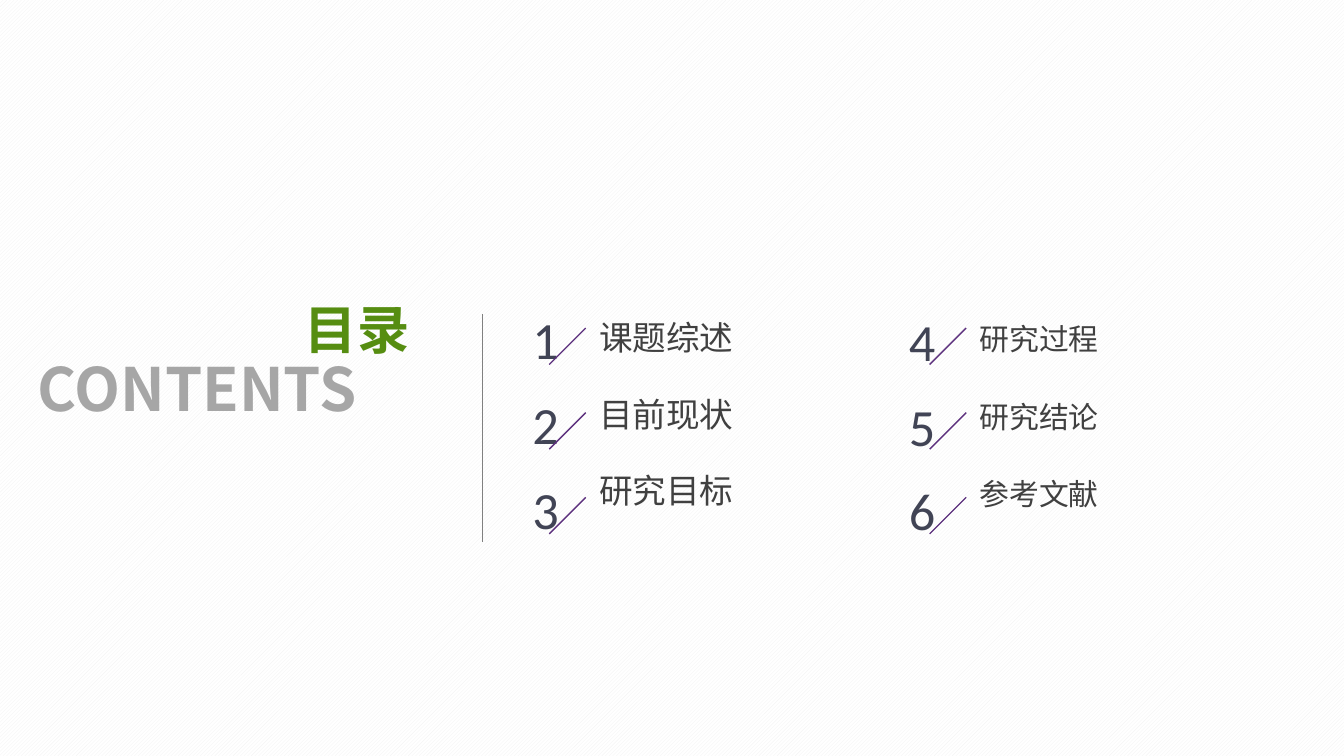
"""Build a contents slide with two numbered columns of topics."""
from dataclasses import dataclass

from lxml import etree
from pptx import Presentation
from pptx import util as u
from pptx.dml.color import RGBColor
from pptx.enum import dml, shapes, text
from pptx.oxml.ns import qn

COLORS = {
    "white": "FFFFFF", "stripe": "F2F2F2", "title": "568D11", "subtitle": "A6A6A6",
    "topic": "404040", "number": "414455", "slash": "5C307D", "divider": "808080",
}
CJK = "Noto Sans CJK SC"
ROW_PITCH = 1.6
SLASH_SIZE = 0.69
SLASH_TOP = 6.2


@dataclass(frozen=True)
class Column:
    topics: tuple[str, ...]
    first: int
    left: float
    top: float
    size: int
    number_left: float
    number_top: float


COLUMNS = (
    Column(("课题综述", "目前现状", "研究目标"), 1, 11.07, 5.87, 18, 9.8, 5.69),
    Column(("研究过程", "研究结论", "参考文献"), 4, 18.26, 5.94, 16, 16.92, 5.72),
)


def color(name: str) -> RGBColor:
    return RGBColor.from_string(COLORS[name])


def place(box, left: float, top: float, width: float, height: float) -> None:
    box.left, box.top = u.Cm(left), u.Cm(top)
    box.width, box.height = u.Cm(width), u.Cm(height)


def write(box, content: str, *, size: int, ink: str, font: str = CJK, bold: bool = False,
          align=text.PP_ALIGN.LEFT, wrap: bool = False, gap: float = 0) -> None:
    frame = box.text_frame
    frame.text = content
    frame.word_wrap = wrap
    frame.auto_size = text.MSO_AUTO_SIZE.NONE
    frame.vertical_anchor = text.MSO_ANCHOR.TOP
    for para in frame.paragraphs:
        para.alignment = align
        para.line_spacing = 1.0
        para.space_before, para.space_after = u.Pt(0), u.Pt(gap)
        for span in para.runs:
            span.font.size, span.font.bold = u.Pt(size), bold
            span.font.color.rgb = color(ink)
            span.font.name = font
            etree.SubElement(span.font._element, qn("a:ea"), typeface=font)


def remove_bullets(box) -> None:
    for para in box.text_frame.paragraphs:
        properties = para._p.get_or_add_pPr()
        properties.set("marL", "0")
        properties.set("indent", "0")
        etree.SubElement(properties, qn("a:buNone"))


def draw_line(page, start: tuple[float, float], end: tuple[float, float], ink: str) -> None:
    line = page.shapes.add_connector(
        shapes.MSO_CONNECTOR.STRAIGHT, *(u.Cm(value) for value in start + end))
    line.line.color.rgb = color(ink)
    line.line.width = u.Pt(0.75)
    etree.SubElement(line._element.spPr, qn("a:effectLst"))


def draw_column(page, box, column: Column) -> None:
    line_height = column.size * 1.448
    place(box, column.left, column.top, 3.07, ROW_PITCH * 2 + 1.02)
    write(box, "\n".join(column.topics), size=column.size, ink="topic",
          gap=round(u.Cm(ROW_PITCH).pt - line_height, 1))
    remove_bullets(box)
    for row in range(len(column.topics)):
        shift = row * ROW_PITCH
        number = page.shapes.add_textbox(
            u.Cm(column.number_left), u.Cm(column.number_top + shift), u.Cm(1.02), u.Cm(1.45))
        write(number, str(column.first + row), size=28, ink="number", font="Calibri",
              align=text.PP_ALIGN.CENTER)
        draw_line(page, (column.left, SLASH_TOP + shift),
                  (column.left - SLASH_SIZE, SLASH_TOP + SLASH_SIZE + shift), "slash")


def main() -> None:
    deck = Presentation()
    deck.slide_width, deck.slide_height = u.Cm(25.4), u.Cm(14.29)
    page = deck.slides.add_slide(deck.slide_layouts.get_by_name("Two Content"))

    fill = page.background.fill
    fill.patterned()
    fill.pattern = dml.MSO_PATTERN.LIGHT_UPWARD_DIAGONAL
    fill.fore_color.rgb, fill.back_color.rgb = color("stripe"), color("white")

    subtitle = page.shapes.add_textbox(u.Cm(0.46), u.Cm(6.53), u.Cm(8.69), u.Cm(1.63))
    write(subtitle, "CONTENTS", size=32, ink="subtitle", bold=True, wrap=True)
    title = page.shapes.title
    place(title, 5.51, 5.49, 2.51, 1.45)
    write(title, "目录", size=28, ink="title", bold=True)

    for index, column in enumerate(COLUMNS, start=1):
        draw_column(page, page.placeholders[index], column)
    draw_line(page, (9.12, 5.94), (9.12, 10.24), "divider")
    deck.save("out.pptx")


if __name__ == "__main__":
    main()
